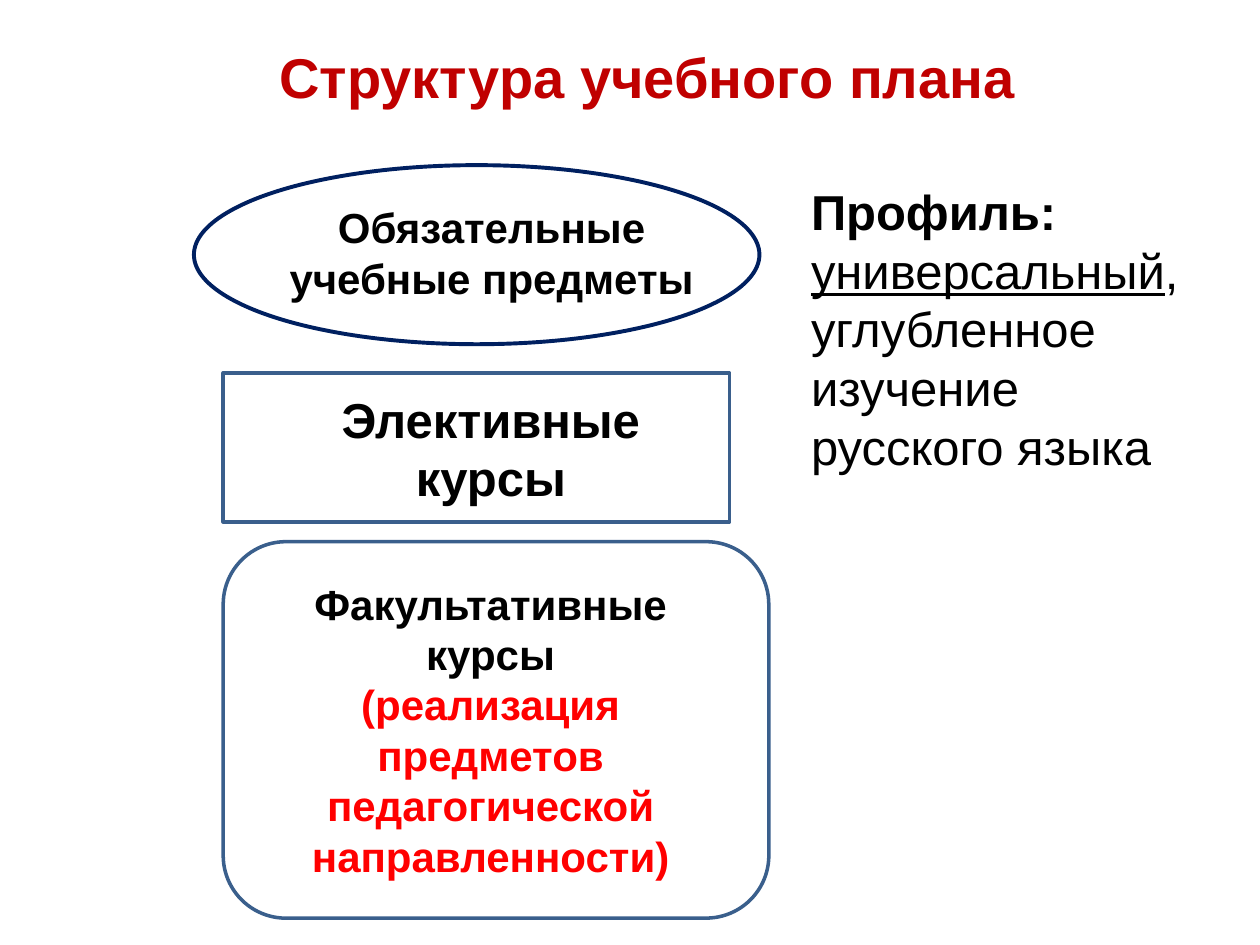
from dataclasses import dataclass

from pptx import Presentation
from pptx.dml.color import RGBColor
from pptx.enum import shapes, text
from pptx import util as u


@dataclass(frozen=True)
class Theme:
    """Colours, type sizes and font of the slide."""
    font: str = "Arial"
    title: str = "C00000"
    ink: str = "000000"
    accent: str = "FF0000"
    paper: str = "FFFFFF"
    navy: str = "002060"
    steel: str = "3A5F8C"
    title_size: int = 32
    large: int = 28
    normal: int = 24


THEME = Theme()
KIND = shapes.MSO_SHAPE

FRAMES = [
    (KIND.OVAL, (3.91, 3.33, 11.4, 3.61), THEME.navy, 2.25),
    (KIND.RECTANGLE, (4.5, 7.52, 10.21, 3), THEME.steel, 2),
    (KIND.ROUNDED_RECTANGLE, (4.5, 10.92, 11, 7.59), THEME.steel, 2),
]

# Each span is (wording, colour, bold, underline).
LABELS = [
    ((2.11, 0.74, 22.2, 1.63), THEME.title_size, True,
     [[("Структура учебного плана ", THEME.title, True, False)]]),
    ((5.11, 3.94, 9.6, 2.31), THEME.normal, True,
     [[("Обязательные учебные предметы", THEME.ink, True, False)]]),
    ((5.69, 7.72, 8.41, 2.64), THEME.large, True,
     [[("Элективные курсы", THEME.ink, True, False)]]),
    ((5.89, 11.53, 8, 6.4), THEME.normal, True,
     [[("Факультативные курсы", THEME.ink, True, False)],
      [("(реализация предметов педагогической направленности)",
        THEME.accent, True, False)]]),
    ((16.1, 3.53, 8.61, 6.25), THEME.large, False,
     [[("Профиль: ", THEME.ink, True, False),
       ("универсальный", THEME.ink, False, True),
       (", углубленное изучение русского языка", THEME.ink, False, False)]]),
]


def add_frame(page, kind, place, colour, width):
    """Add one outlined shape."""
    frame = page.shapes.add_shape(kind, *map(u.Cm, place))
    frame.shadow.inherit = False
    frame.fill.solid()
    frame.fill.fore_color.rgb = RGBColor.from_string(THEME.paper)
    frame.line.color.rgb = RGBColor.from_string(colour)
    frame.line.width = u.Pt(width)


def add_label(page, place, size, centred, paragraphs):
    """Add one wrapped text box, run by run."""
    box = page.shapes.add_textbox(*map(u.Cm, place)).text_frame
    box.word_wrap = True
    box.auto_size = text.MSO_AUTO_SIZE.SHAPE_TO_FIT_TEXT
    for index, spans in enumerate(paragraphs):
        para = box.add_paragraph() if index else box.paragraphs[0]
        para.alignment = text.PP_ALIGN.CENTER if centred else text.PP_ALIGN.LEFT
        for wording, colour, bold, underline in spans:
            span = para.add_run()
            span.text = wording
            span.font.name = THEME.font
            span.font.size = u.Pt(size)
            span.font.bold = bold
            span.font.underline = underline
            span.font.color.rgb = RGBColor.from_string(colour)


def main():
    """Build and save the slide."""
    deck = Presentation()
    deck.slide_width, deck.slide_height = u.Cm(25.4), u.Cm(19.05)
    page = deck.slides.add_slide(deck.slide_layouts[6])
    for frame in FRAMES:
        add_frame(page, *frame)
    for label in LABELS:
        add_label(page, *label)
    deck.save("out.pptx")


if __name__ == "__main__":
    main()
